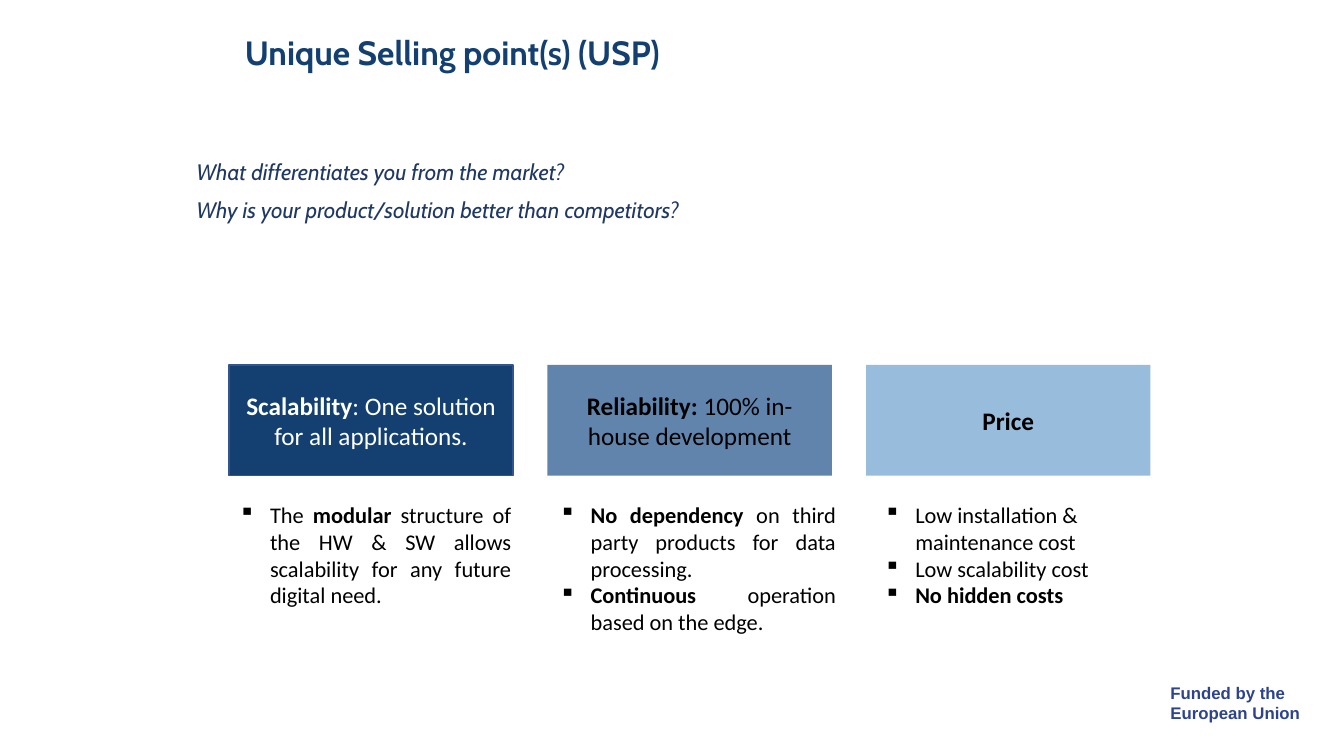
from dataclasses import dataclass

from lxml import etree
from pptx import Presentation
from pptx import util as u
from pptx.dml.color import RGBColor
from pptx.enum import shapes, text
from pptx.oxml import ns

EMU_PER_PX = 9144
BLACK, WHITE, NAVY = "000000", "FFFFFF", "134070"
LEFT, CENTER, JUSTIFY = text.PP_ALIGN.LEFT, text.PP_ALIGN.CENTER, text.PP_ALIGN.JUSTIFY
PILLAR_LEFT, PILLAR_PITCH = 227, 316
PILLAR_TOP, PILLAR_WIDTH, PILLAR_HEIGHT = 362, 282, 110
POINTS_TOP, BULLET_INDENT = 492, 31

Runs = list[tuple[str, bool]]


@dataclass
class Style:
    size: int
    font: str
    color: str
    italic: bool = False
    align: text.PP_ALIGN = LEFT
    line_spacing: float = 1.0
    gap: int = 0
    bulleted: bool = False


@dataclass
class TextBlock:
    box: tuple[int, int, int, int]
    paragraphs: list[Runs]
    style: Style


@dataclass
class Pillar:
    heading: Runs
    fill: str
    color: str
    points: list[Runs]
    points_left: int
    points_width: int
    points_height: int
    align: text.PP_ALIGN = JUSTIFY
    outline: str | None = None


BLOCKS = [
    TextBlock((1151, 672, 159, 50), [[("Funded by the", True)], [("European Union", True)]],
              Style(12, "Arial", "2D438B")),
    TextBlock((233, 31, 1058, 42), [[("Unique Selling point(s) (USP)", True)]],
              Style(24, "Cabin", NAVY, line_spacing=0.9)),
    TextBlock((185, 155, 1107, 70),
              [[("What differentiates you from the market?", False)],
               [("Why is your product/solution better than competitors?", False)]],
              Style(16, "Cabin", "203864", italic=True, line_spacing=0.9, gap=10)),
]

PILLARS = [
    Pillar([("Scalability", True), (": One solution for all applications.", False)],
           NAVY, WHITE,
           [[("The ", False), ("modular", True),
             (" structure of the HW & SW allows scalability for any future digital need.", False)]],
           227, 290, 118, outline="325491"),
    Pillar([("Reliability: ", True), ("100% in-house development", False)],
           "6084AC", BLACK,
           [[("No dependency", True), (" on third party products for data processing.", False)],
            [("Continuous", True), (" operation based on the edge.", False)]],
           545, 294, 145),
    Pillar([("Price", True)], "97BCDC", BLACK,
           [[("Low installation & maintenance cost", False)],
            [("Low scalability cost", False)],
            [("No hidden costs", True)]],
           867, 266, 118, align=LEFT),
]


def px(length: int) -> u.Emu:
    return u.Emu(length * EMU_PER_PX)


def rgb(value: str) -> RGBColor:
    return RGBColor.from_string(value)


def apply(target, values: dict) -> None:
    for name, value in values.items():
        setattr(target, name, value)


def add_bullet(paragraph) -> None:
    properties = paragraph._p.get_or_add_pPr()
    properties.set("marL", str(px(BULLET_INDENT)))
    properties.set("indent", str(-px(BULLET_INDENT)))
    etree.SubElement(properties, ns.qn("a:buChar")).set("char", "▪")


def write(frame, paragraphs: list[Runs], style: Style) -> None:
    frame.word_wrap = True
    for index, runs in enumerate(paragraphs):
        paragraph = frame.add_paragraph() if index else frame.paragraphs[0]
        if style.bulleted:
            add_bullet(paragraph)
        apply(paragraph, {"alignment": style.align, "line_spacing": style.line_spacing,
                          "space_before": u.Pt(style.gap if index else 0)})
        for content, bold in runs:
            run = paragraph.add_run()
            run.text = content
            apply(run.font, {"name": style.font, "size": u.Pt(style.size),
                             "bold": bold, "italic": style.italic})
            run.font.color.rgb = rgb(style.color)


def add_text(slide, block: TextBlock) -> None:
    shape = slide.shapes.add_textbox(*map(px, block.box))
    write(shape.text_frame, block.paragraphs, block.style)


def add_pillar(slide, pillar: Pillar, left: int) -> None:
    box = (left, PILLAR_TOP, PILLAR_WIDTH, PILLAR_HEIGHT)
    shape = slide.shapes.add_shape(shapes.MSO_SHAPE.RECTANGLE, *map(px, box))
    shape.shadow.inherit = False
    shape.fill.solid()
    shape.fill.fore_color.rgb = rgb(pillar.fill)
    if pillar.outline:
        shape.line.color.rgb = rgb(pillar.outline)
        shape.line.width = u.Pt(1)
    else:
        shape.line.fill.background()
    shape.text_frame.vertical_anchor = text.MSO_ANCHOR.MIDDLE
    write(shape.text_frame, [pillar.heading], Style(18, "Calibri", pillar.color, align=CENTER))
    add_text(slide, TextBlock(
        (pillar.points_left, POINTS_TOP, pillar.points_width, pillar.points_height),
        pillar.points, Style(16, "Calibri", BLACK, align=pillar.align, bulleted=True)))


def main() -> None:
    presentation = Presentation()
    apply(presentation, {"slide_width": px(1333), "slide_height": px(750)})
    slide = presentation.slides.add_slide(presentation.slide_layouts[6])
    for block in BLOCKS:
        add_text(slide, block)
    for index, pillar in enumerate(PILLARS):
        add_pillar(slide, pillar, PILLAR_LEFT + index * PILLAR_PITCH)
    presentation.save("out.pptx")


if __name__ == "__main__":
    main()
